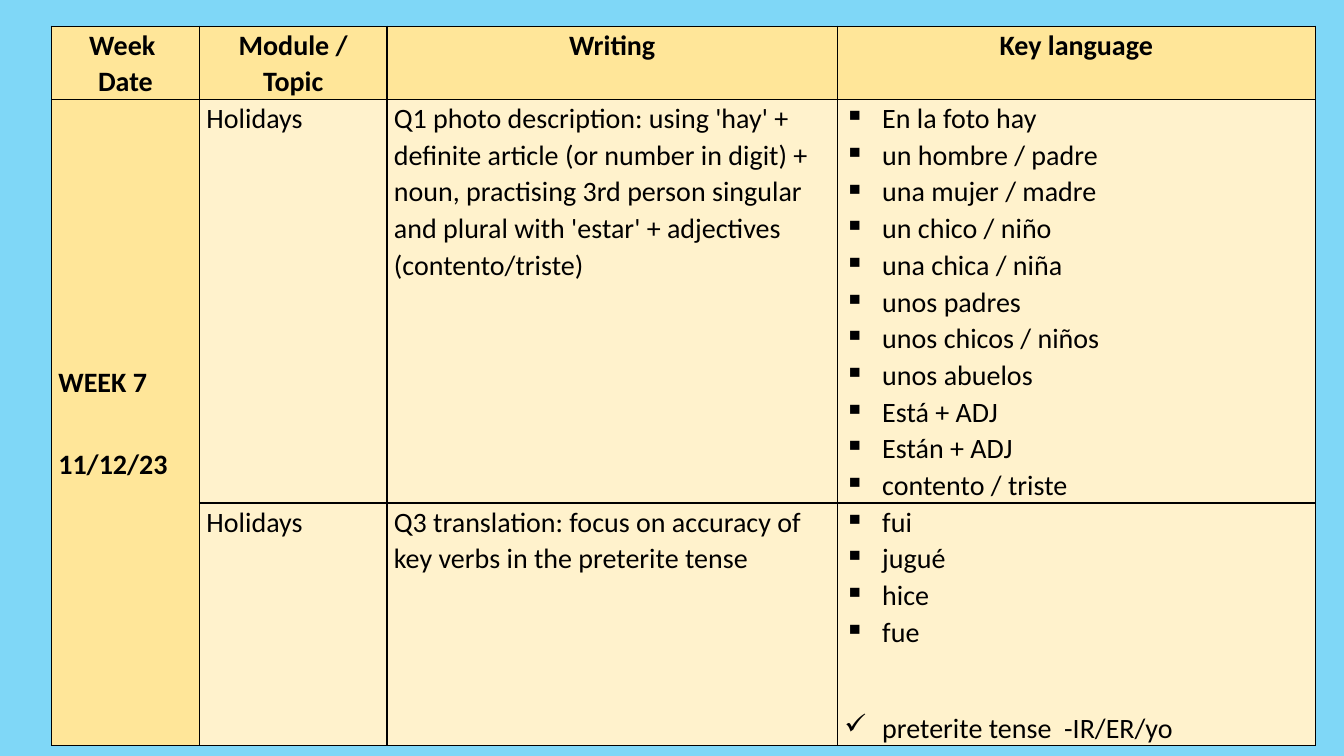
from pptx import Presentation
from pptx.dml.color import RGBColor
from pptx.enum import text
from pptx.oxml import parse_xml
from pptx.oxml.ns import nsdecls
from pptx.util import Pt

SKY, GOLD, CREAM, BLACK = "7FD7F7", "FFE699", "FFF2CC", "000000"
COLUMNS = [105.8, 133.9, 321.8, 341.3]
ROWS = [52.3, 288, 173.5]
HEADINGS = ["Week \vDate", "Module / Topic", "Writing", "Key language"]
LESSONS = [
    ("Holidays",
     "Q1 photo description: using 'hay' + definite article (or number in digit) + noun, "
     "practising 3rd person singular and plural with 'estar' + adjectives (contento/triste)",
     ["En la foto hay", "un hombre / padre", "una mujer / madre", "un chico / niño",
      "una chica / niña", "unos padres", "unos chicos / niños", "unos abuelos",
      "Está + ADJ", "Están + ADJ", "contento / triste"]),
    ("Holidays",
     "Q3 translation: focus on accuracy of key verbs in the preterite tense",
     ["fui", "jugué", "hice", "fue"]),
]


def color(value):
    return RGBColor.from_string(value)


class Deck:
    font, size, spacing, indent = "Calibri", 20, 1.07, 27

    def __init__(self, width, height):
        self.prs = Presentation()
        self.prs.slide_width, self.prs.slide_height = Pt(width), Pt(height)

    def add_slide(self, background):
        self.s = self.prs.slides.add_slide(self.prs.slide_layouts[6])
        fill = self.s.background.fill
        fill.solid()
        fill.fore_color.rgb = color(background)

    def table(self, left, top, widths, heights):
        frame = self.s.shapes.add_table(len(heights), len(widths), Pt(left), Pt(top),
                                        Pt(sum(widths)), Pt(sum(heights)))
        table = frame.table
        table.first_row = table.horz_banding = False
        for column, width in zip(table.columns, widths):
            column.width = Pt(width)
        for row, height in zip(table.rows, heights):
            row.height = Pt(height)
        return table

    def cell(self, cell, fill):
        """Give a cell its fill, margins and four borders."""
        cell.margin_left = cell.margin_right = Pt(5)
        cell.margin_top = cell.margin_bottom = 0
        cell.fill.solid()
        cell.fill.fore_color.rgb = color(fill)
        props = cell._tc.get_or_add_tcPr()
        for i, side in enumerate("LRTB"):
            props.insert(i, parse_xml(
                f'<a:ln{side} {nsdecls("a")} w="{Pt(1)}"><a:solidFill>'
                f'<a:srgbClr val="{BLACK}"/></a:solidFill></a:ln{side}>'))

    def paragraph(self, cell, words, bold=False, center=False, bullet=None, before=0):
        """Fill the cell's first paragraph, or add one if it is taken."""
        tf = cell.text_frame
        p = tf.add_paragraph() if tf.text else tf.paragraphs[0]
        p.text = words
        p.line_spacing = self.spacing
        if before:
            p.space_before = Pt(before)
        if center:
            p.alignment = text.PP_ALIGN.CENTER
        if bullet:
            props = p._p.get_or_add_pPr()
            props.set("marL", str(Pt(self.indent)))
            props.set("indent", str(-Pt(self.indent)))
            props.append(parse_xml(f'<a:buChar {nsdecls("a")} char="{bullet}"/>'))
        p.font.name, p.font.size, p.font.bold = self.font, Pt(self.size), bold
        p.font.color.rgb = color(BLACK)


def main():
    deck = Deck(960, 540)
    deck.add_slide(SKY)
    plan = deck.table(36.7, 18.7, COLUMNS, ROWS)
    for row in range(len(ROWS)):
        for col in range(len(COLUMNS)):
            deck.cell(plan.cell(row, col), CREAM if row and col else GOLD)

    for col, heading in enumerate(HEADINGS):
        deck.paragraph(plan.cell(0, col), heading, bold=True, center=True)

    week = plan.cell(1, 0)
    week.merge(plan.cell(2, 0))
    week.vertical_anchor = text.MSO_ANCHOR.MIDDLE
    deck.paragraph(week, "WEEK 7", bold=True)
    deck.paragraph(week, "11/12/23", bold=True, before=33)

    for row, (topic, writing, phrases) in enumerate(LESSONS, start=1):
        deck.paragraph(plan.cell(row, 1), topic)
        deck.paragraph(plan.cell(row, 2), writing)
        for phrase in phrases:
            deck.paragraph(plan.cell(row, 3), phrase, bullet="▪")
    deck.paragraph(plan.cell(2, 3), "preterite tense  -IR/ER/yo", bullet="✓", before=42.4)

    deck.prs.save("out.pptx")


if __name__ == "__main__":
    main()
